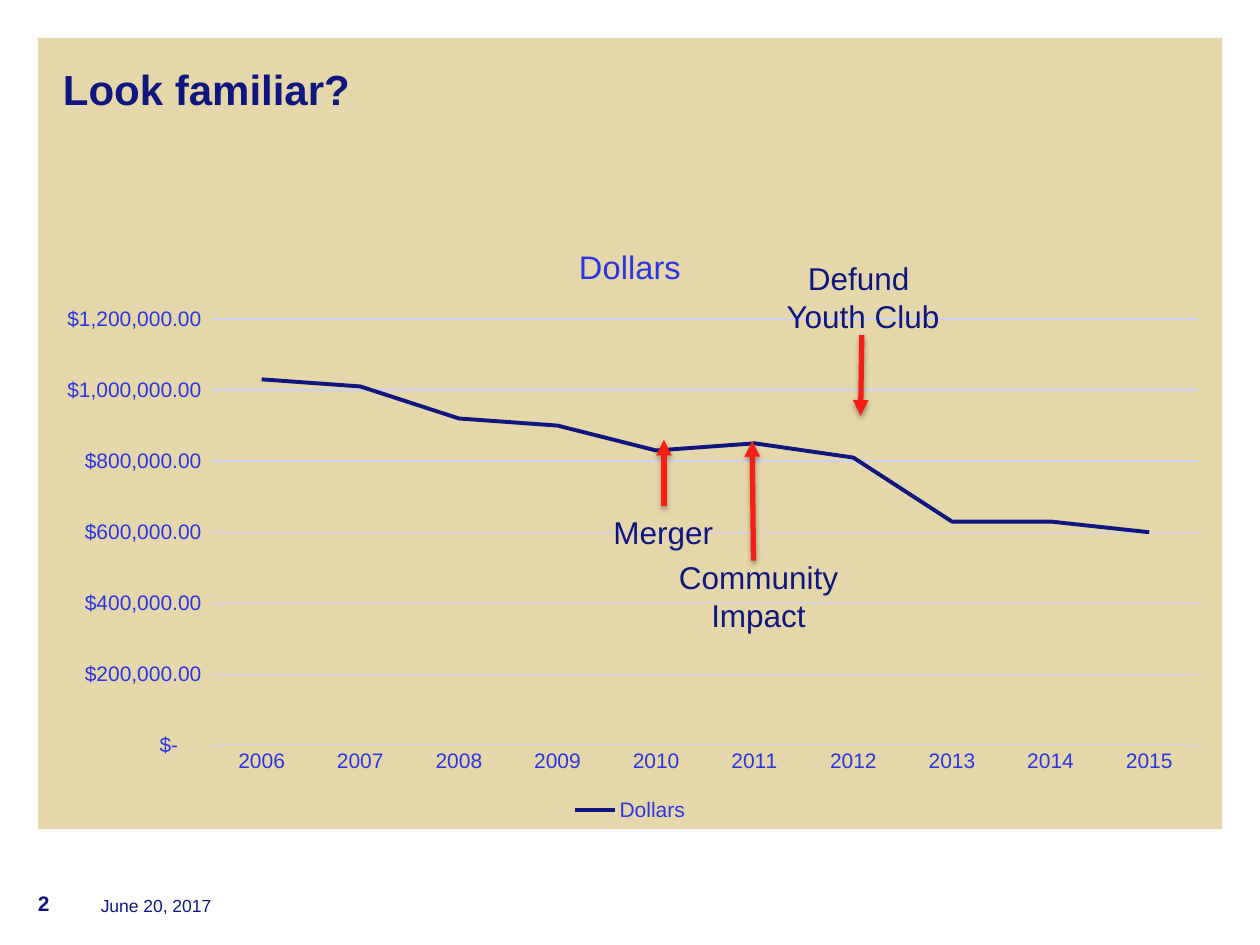
from dataclasses import dataclass

from lxml import etree
from pptx import Presentation
from pptx import util as u
from pptx.chart.data import CategoryChartData
from pptx.dml.color import RGBColor
from pptx.enum import chart as ch, shapes, text
from pptx.oxml import parse_xml
from pptx.oxml.ns import nsdecls, qn

PX = 9144
NUMBER_FORMAT = '_("$"* #,##0.00_);_("$"* \\(#,##0.00\\);_("$"* "-"??_);_(@_)'


@dataclass(frozen=True)
class Theme:
    font: str = "Arial"
    panel: str = "E6D7AA"
    navy: str = "10167F"
    blue: str = "2B35E4"
    grid: str = "CED0F9"
    red: str = "F51E14"
    title: float = 24
    chart_title: float = 18.6
    callout: float = 18
    label: float = 12
    date: float = 10


class SlideBuilder:
    def __init__(self, prs, theme):
        self.theme = theme
        self.s = prs.slides.add_slide(prs.slide_layouts[6])

    def style_font(self, font, size, color, bold=False):
        font.name, font.size, font.bold = self.theme.font, u.Pt(size), bold
        font.color.rgb = RGBColor.from_string(color)

    def style_line(self, line, color, width):
        line.color.rgb = RGBColor.from_string(color)
        line.width = u.Pt(width)

    def add_panel(self, *box):
        sp = self.s.shapes.add_shape(
            shapes.MSO_SHAPE.RECTANGLE, *(v * PX for v in box))
        sp.shadow.inherit = False
        sp.fill.solid()
        sp.fill.fore_color.rgb = RGBColor.from_string(self.theme.panel)
        sp.line.fill.background()

    def add_text(self, box, words, size, bold=False, insets=(10, 5, 10, 5),
                 anchor=text.MSO_ANCHOR.TOP, align=text.PP_ALIGN.LEFT, wrap=True):
        sp = self.s.shapes.add_textbox(*(v * PX for v in box))
        tf = sp.text_frame
        tf.word_wrap = wrap
        tf.vertical_anchor = anchor
        tf.margin_left, tf.margin_top, tf.margin_right, tf.margin_bottom = (
            v * PX for v in insets)
        tf.text = words
        for p in tf.paragraphs:
            p.alignment = align
            for r in p.runs:
                self.style_font(r.font, size, self.theme.navy, bold)
        return sp

    def add_callout(self, box, words, align=text.PP_ALIGN.CENTER):
        sp = self.add_text(box, words, self.theme.callout, align=align, wrap=False)
        sp.text_frame.auto_size = text.MSO_AUTO_SIZE.SHAPE_TO_FIT_TEXT
        return sp

    def add_footer(self, box, words, size, bold=False):
        self.add_text(box, words, size, bold, (0, 0, 0, 8), text.MSO_ANCHOR.BOTTOM)

    def add_arrow(self, *ends, source=None):
        c = self.s.shapes.add_connector(
            shapes.MSO_CONNECTOR.STRAIGHT, *(v * PX for v in ends))
        if source is not None:
            c.begin_connect(source, 0)
        self.style_line(c.line, self.theme.red, 3)
        properties = c._element.spPr
        etree.SubElement(properties.get_or_add_ln(), qn("a:tailEnd"), type="triangle")
        properties.append(parse_xml(
            f'<a:effectLst {nsdecls("a")}><a:outerShdw blurRad="39370" '
            'dist="22860" dir="5400000" rotWithShape="0"><a:srgbClr val="000000">'
            '<a:alpha val="35000"/></a:srgbClr></a:outerShdw></a:effectLst>'))

    def add_line_chart(self, box, name, categories, values):
        t = self.theme
        data = CategoryChartData(number_format=NUMBER_FORMAT)
        data.categories = categories
        data.add_series(name, values)
        chart = self.s.shapes.add_chart(
            ch.XL_CHART_TYPE.LINE, *(v * PX for v in box), data).chart
        self.style_font(chart.font, t.date, t.navy)
        chart.has_title = True
        tf = chart.chart_title.text_frame
        tf.text = name
        self.style_font(tf.paragraphs[0].runs[0].font, t.chart_title, t.blue)
        chart.has_legend = True
        chart.legend.position = ch.XL_LEGEND_POSITION.BOTTOM
        chart.legend.include_in_layout = False
        self.style_font(chart.legend.font, t.label, t.blue)
        for axis in (chart.category_axis, chart.value_axis):
            axis.major_tick_mark = axis.minor_tick_mark = ch.XL_TICK_MARK.NONE
            self.style_font(axis.tick_labels.font, t.label, t.blue)
        self.style_line(chart.category_axis.format.line, t.grid, 0.75)
        axis = chart.value_axis
        axis.minimum_scale, axis.maximum_scale, axis.major_unit = 0, 1200000, 200000
        axis.format.line.fill.background()
        self.style_line(axis.major_gridlines.format.line, t.grid, 0.75)
        axis.tick_labels.number_format = NUMBER_FORMAT
        axis.tick_labels.number_format_is_linked = False
        plot = chart.plots[0]
        plot.vary_by_categories = False
        series = plot.series[0]
        series.smooth = False
        series.marker.style = ch.XL_MARKER_STYLE.NONE
        self.style_line(series.format.line, t.navy, 2.25)


def main():
    prs = Presentation()
    prs.slide_width, prs.slide_height = 1000 * PX, 750 * PX
    theme = Theme()
    b = SlideBuilder(prs, theme)

    b.add_panel(30, 30, 940, 628)
    b.add_text((30, 30, 940, 125), "Look familiar?", theme.title, True,
               (20, 20, 50, 0))
    b.add_line_chart((30, 175, 940, 481), "Dollars",
                     [str(year) for year in range(2006, 2016)],
                     [1030000, 1010000, 920000, 900000, 830000,
                      850000, 810000, 630000, 630000, 600000])
    b.add_footer((80, 685, 700, 50), "June 20, 2017", theme.date)
    b.add_footer((30, 685, 50, 50), "2", theme.label, True)

    merger = b.add_callout((477, 402, 100, 40), "Merger", text.PP_ALIGN.LEFT)
    b.add_callout((528, 438, 148, 71), "Community\nImpact")
    b.add_callout((611, 201, 148, 71), "Defund \nYouth Club")
    b.add_arrow(527, 402, 527, 349, source=merger)
    b.add_arrow(598, 445, 597, 350)
    b.add_arrow(684, 266, 683, 330)

    prs.save("out.pptx")


if __name__ == "__main__":
    main()
